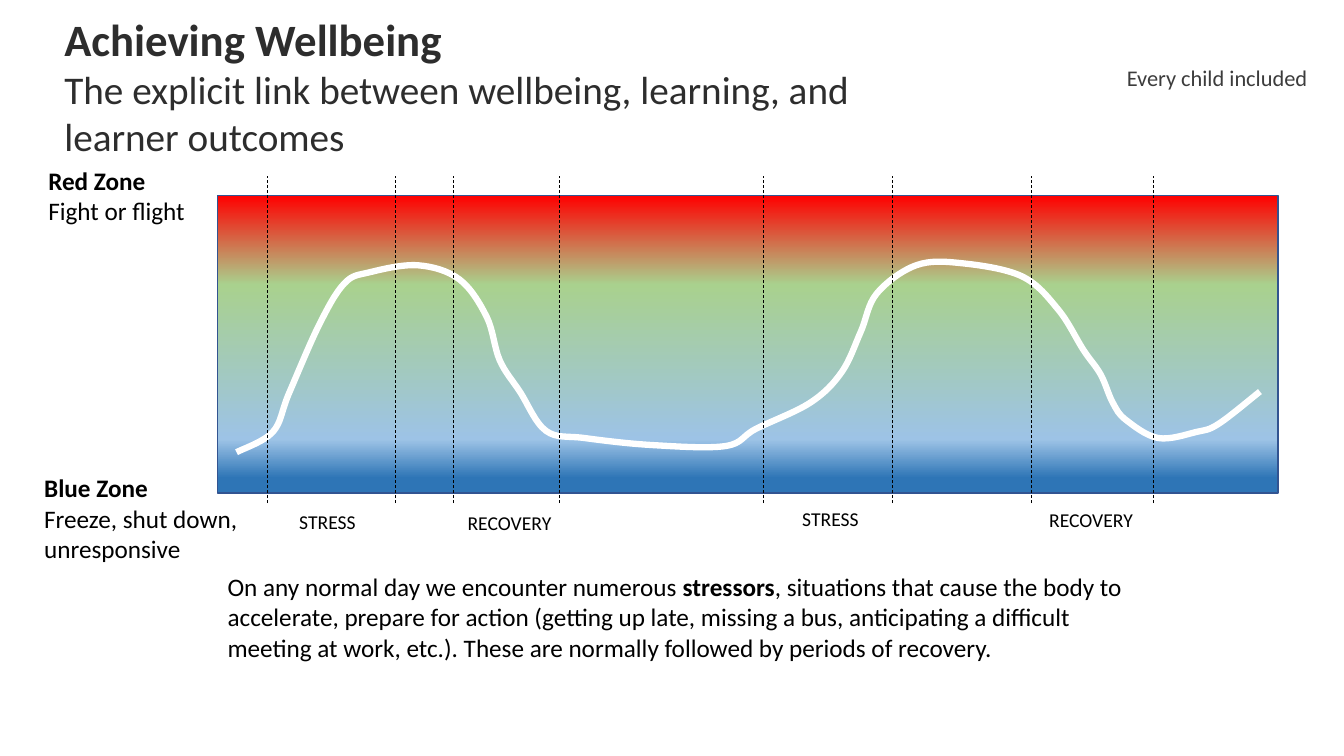
from dataclasses import dataclass

from lxml import etree
from pptx import Presentation
from pptx.dml.color import RGBColor
from pptx.enum.dml import MSO_LINE
from pptx.enum.shapes import MSO_CONNECTOR, MSO_SHAPE
from pptx.oxml.ns import qn
from pptx.util import Pt

DASH = MSO_LINE.DASH
STRAIGHT = MSO_CONNECTOR.STRAIGHT
RECTANGLE = MSO_SHAPE.RECTANGLE


@dataclass(frozen=True)
class Theme:
    """Colours and type sizes of the slide."""
    font: str = "Calibri"
    ink: str = "000000"
    heading: str = "2D2D2D"
    tagline: str = "3C3C3C"
    border: str = "325491"
    curve: str = "FFFFFF"
    zones: tuple = ((0, "FF0000"), (30, "A9D18E"), (82, "9DC3E6"), (95, "2E75B6"))
    title_size: int = 32
    subtitle_size: int = 28
    body_size: int = 18
    tagline_size: int = 16
    label_size: int = 14


class SlideBuilder:
    """Draws styled elements on one slide, with lengths in points."""

    def __init__(self, slide, theme):
        self.shapes = slide.shapes
        self.theme = theme

    def text(self, left, top, width, height, paragraphs, size, color=None):
        """Add a text box; each paragraph is a list of (text, bold) runs."""
        box = self.shapes.add_textbox(Pt(left), Pt(top), Pt(width), Pt(height))
        frame = box.text_frame
        frame.word_wrap = True
        for index, runs in enumerate(paragraphs):
            paragraph = frame.paragraphs[0] if index == 0 else frame.add_paragraph()
            paragraph.font.name = self.theme.font
            paragraph.font.size = Pt(size)
            paragraph.font.color.rgb = RGBColor.from_string(color or self.theme.ink)
            for content, bold in runs:
                run = paragraph.add_run()
                run.text = content
                if bold:
                    run.font.bold = True
        return frame

    def zone_band(self, left, top, width, height):
        """Add the rectangle shaded from the red zone to the blue zone."""
        band = self.shapes.add_shape(RECTANGLE, Pt(left), Pt(top), Pt(width), Pt(height))
        band.shadow.inherit = False
        band.line.color.rgb = RGBColor.from_string(self.theme.border)
        band.line.width = Pt(1)
        band.fill.gradient()
        band.fill.gradient_angle = 270
        stops = band._element.spPr.find(qn("a:gradFill")).find(qn("a:gsLst"))
        for stop in list(stops):
            stops.remove(stop)
        for percent, color in self.theme.zones:
            stop = etree.SubElement(stops, qn("a:gs"), pos=str(percent * 1000))
            etree.SubElement(stop, qn("a:srgbClr"), val=color)

    def smooth_curve(self, knots, width):
        """Add an open curve through the knots, with tangents from their neighbours."""
        builder = self.shapes.build_freeform(*knots[0], scale=Pt(1))
        builder.add_line_segments(knots[1:], close=False)
        curve = builder.convert_to_shape()
        curve.shadow.inherit = False
        curve.fill.background()
        curve.line.color.rgb = RGBColor.from_string(self.theme.curve)
        curve.line.width = Pt(width)
        outline = next(curve._element.iter(qn("a:path")))
        left, top = (min(axis) for axis in zip(*knots))
        points = [(Pt(x - left), Pt(y - top)) for x, y in knots]
        outline.set("w", str(max(x for x, y in points)))
        outline.set("h", str(max(y for x, y in points)))
        for segment in outline.findall(qn("a:lnTo")):
            outline.remove(segment)
        start = next(outline.iter(qn("a:pt")))
        start.set("x", str(points[0][0]))
        start.set("y", str(points[0][1]))
        padded = [points[0], *points, points[-1]]
        for before, begin, end, after in zip(padded, padded[1:], padded[2:], padded[3:]):
            first = [b + (e - p) / 6 for p, b, e in zip(before, begin, end)]
            second = [e - (a - b) / 6 for b, e, a in zip(begin, end, after)]
            segment = etree.SubElement(outline, qn("a:cubicBezTo"))
            for x, y in (first, second, end):
                etree.SubElement(segment, qn("a:pt"), x=str(round(x)), y=str(round(y)))

    def dashed_line(self, x, bottom, top):
        """Add a thin vertical dashed line."""
        line = self.shapes.add_connector(STRAIGHT, Pt(x), Pt(bottom), Pt(x), Pt(top))
        line.line.color.rgb = RGBColor.from_string(self.theme.ink)
        line.line.width = Pt(0.5)
        line.line.dash_style = DASH
        etree.SubElement(line._element.spPr, qn("a:effectLst"))


STRESS_CURVE = [
    (169.2, 322.6), (195.1, 308.2), (206.6, 280.8), (228.2, 231.8),
    (246.2, 202.3), (264.2, 194.4), (298.8, 189.4), (328.3, 199.4),
    (347.8, 226.1), (357.1, 257), (371.5, 279.4), (390.2, 307.4),
    (417.6, 312.5), (465.8, 317.5), (518.4, 318.2), (540, 306),
    (578.9, 287.3), (601.2, 265.7), (614.9, 236.9), (626.4, 209.5),
    (654.5, 189.4), (686.9, 187.9), (730.1, 197.3), (756, 221),
    (774, 249.8), (786.2, 267.1), (794.9, 287.3), (804.2, 299.5),
    (827.3, 312.5), (854.6, 308.2), (870.5, 302.4), (900, 279.4),
]
PHASE_LABELS = [
    ("STRESS", 206.6, 360.7, 66.2),
    ("RECOVERY", 326.9, 361.4, 99.4),
    ("RECOVERY", 742.3, 359.3, 99.4),
    ("STRESS", 565.9, 358.6, 66.2),
]
PHASE_BOUNDARIES = [190.8, 282.2, 324, 399.6, 545, 637.2, 736.6, 823.7]


def main():
    """Build the wellbeing slide and save it."""
    presentation = Presentation()
    presentation.slide_width = Pt(960)
    presentation.slide_height = Pt(540)
    slide = presentation.slides.add_slide(presentation.slide_layouts[6])
    theme = Theme()
    builder = SlideBuilder(slide, theme)

    builder.text(797.8, 42.5, 162, 26.6, [[("Every child included", False)]],
                 theme.tagline_size, theme.tagline)
    heading = builder.text(
        38.9, 5, 623.5, 88.6,
        [[("Achieving Wellbeing", True)],
         [("The explicit link between wellbeing, learning, and learner outcomes", False)]],
        theme.subtitle_size, theme.heading)
    heading.paragraphs[0].font.size = Pt(theme.title_size)

    builder.zone_band(155.5, 139.7, 757.4, 212.4)
    builder.smooth_curve(STRESS_CURVE, 4.5)
    builder.text(27.4, 114.5, 125.3, 51.1,
                 [[("Red Zone", True)], [("Fight or flight", False)]], theme.body_size)
    builder.text(24.5, 334.1, 175.7, 72.7,
                 [[("Blue Zone", True)], [("Freeze, shut down, unresponsive", False)]],
                 theme.body_size)
    builder.text(
        155.5, 404.6, 666.7, 72.7,
        [[("On any normal day we encounter numerous ", False), ("stressors", True),
          (", situations that cause the body to accelerate, prepare for action "
           "(getting up late, missing a bus, anticipating a difficult meeting at work, "
           "etc.). These are normally followed by periods of recovery.", False)]],
        theme.body_size)
    for label, left, top, width in PHASE_LABELS:
        builder.text(left, top, width, 24.5, [[(label, False)]], theme.label_size)
    for x in PHASE_BOUNDARIES:
        builder.dashed_line(x, 359.3, 126)

    presentation.save("out.pptx")


if __name__ == "__main__":
    main()
